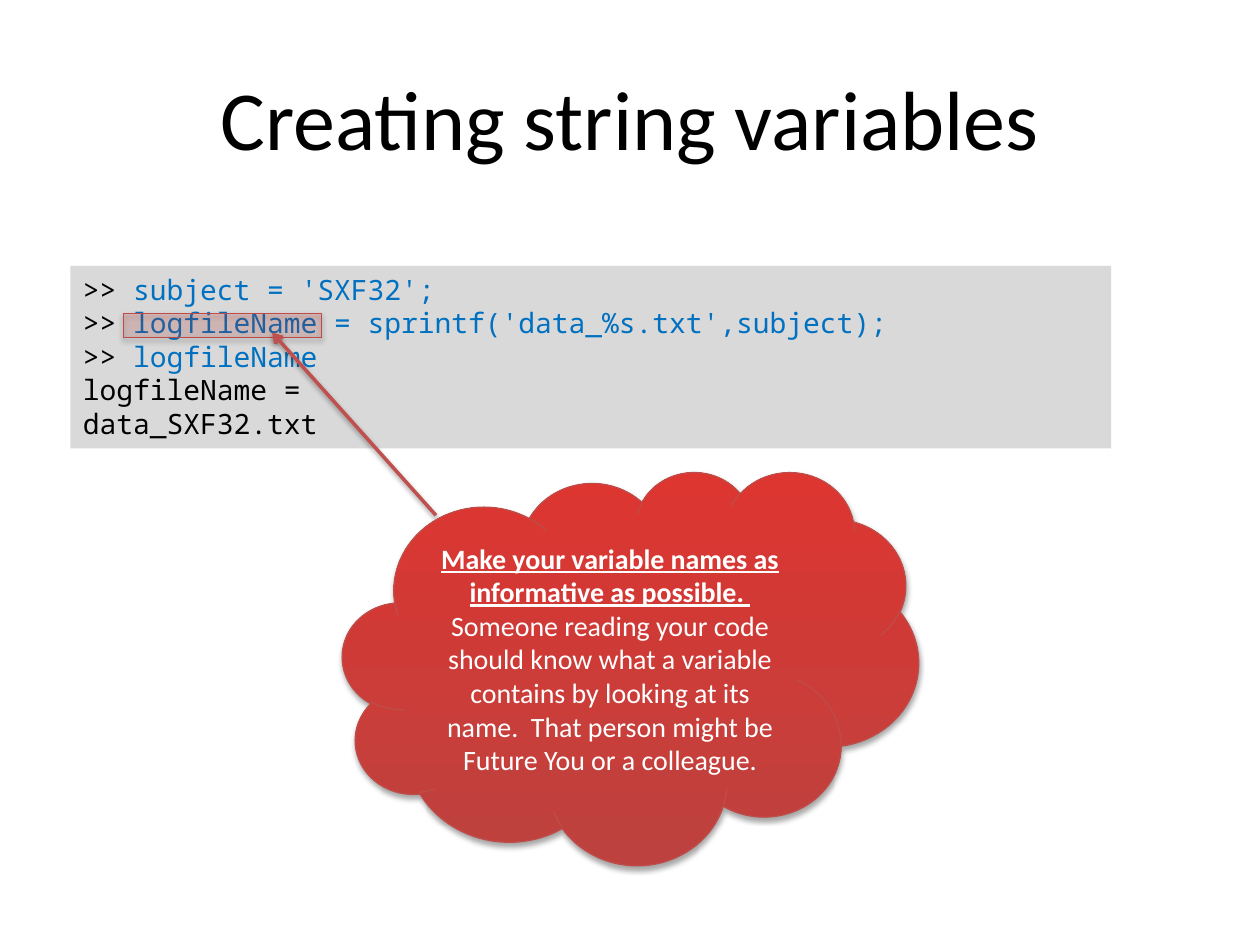
from dataclasses import dataclass
from typing import Optional

from lxml import etree
from pptx import Presentation, util as u
from pptx.dml.color import RGBColor
from pptx.enum import shapes, text
from pptx.oxml import parse_xml
from pptx.oxml.ns import nsdecls, qn

W, H = 10, 7.5
BLACK, BLUE, WHITE = "000000", "0070C0", "FFFFFF"
GREY, RED, DARK_RED, EDGE, ARROW = "D9D9D9", "DD3530", "BD423F", "BF4C48", "C0504D"
SANS, MONO = "Calibri", "Noto Sans Mono"


@dataclass
class Box:
    x: float
    y: float
    w: float
    h: float

    def emu(self) -> tuple:
        return (u.Inches(self.x * W), u.Inches(self.y * H),
                u.Inches(self.w * W), u.Inches(self.h * H))


@dataclass
class Span:
    text: str
    color: str
    font: str = MONO
    size: float = 16
    strong: bool = False


def rgb(value: str) -> RGBColor:
    return RGBColor.from_string(value)


def write(p, spans: list[Span], align=text.PP_ALIGN.LEFT) -> None:
    p.alignment = align
    for span in spans:
        r = p.add_run()
        r.text = span.text
        f = r.font
        f.name, f.size = span.font, u.Pt(span.size)
        f.bold = f.underline = span.strong
        f.color.rgb = rgb(span.color)


def add_shadow(sp, opacity: int, distance: float) -> None:
    sp_pr = sp._element.spPr
    for old in sp_pr.findall(qn("a:effectLst")):
        sp_pr.remove(old)
    sp_pr.append(parse_xml(
        f'<a:effectLst {nsdecls("a")}><a:outerShdw blurRad="{u.Pt(3.1)}" '
        f'dist="{u.Pt(distance)}" dir="5400000" rotWithShape="0">'
        f'<a:srgbClr val="{BLACK}"><a:alpha val="{opacity * 1000}"/></a:srgbClr>'
        f'</a:outerShdw></a:effectLst>'))


def add_red_shape(s, kind, box: Box, opacity: Optional[int] = None):
    sp = s.shapes.add_shape(kind, *box.emu())
    sp.fill.gradient()
    sp.fill.gradient_angle = 90
    for stop, color in zip(sp.fill.gradient_stops, (DARK_RED, RED)):
        stop.color.rgb = rgb(color)
    if opacity is not None:
        for color in sp._element.spPr.find(qn("a:gradFill")).iter(qn("a:srgbClr")):
            etree.SubElement(color, qn("a:alpha")).set("val", str(opacity * 1000))
    sp.line.color.rgb = rgb(EDGE)
    sp.line.width = u.Pt(0.75)
    add_shadow(sp, 35, 1.8)
    return sp


def add_title(s, box: Box, title: str) -> None:
    sp = s.shapes.title
    sp.left, sp.top, sp.width, sp.height = box.emu()
    tf = sp.text_frame
    tf.vertical_anchor = text.MSO_ANCHOR.MIDDLE
    write(tf.paragraphs[0], [Span(title, BLACK, SANS, 48)], text.PP_ALIGN.CENTER)


def add_code(s, box: Box, lines: list[str]) -> None:
    sp = s.shapes.add_shape(shapes.MSO_SHAPE.RECTANGLE, *box.emu())
    sp.shadow.inherit = False
    sp.fill.solid()
    sp.fill.fore_color.rgb = rgb(GREY)
    sp.line.fill.background()
    tf = sp.text_frame
    tf.word_wrap = True
    tf.vertical_anchor = text.MSO_ANCHOR.TOP
    tf.auto_size = text.MSO_AUTO_SIZE.SHAPE_TO_FIT_TEXT
    prompt = ">> "
    for i, line in enumerate(lines):
        p = tf.add_paragraph() if i else tf.paragraphs[0]
        if line.startswith(prompt):
            write(p, [Span(prompt, BLACK), Span(line[len(prompt):], BLUE)])
        else:
            write(p, [Span(line, BLACK)])


def add_arrow(s, start: tuple[float, float], end: tuple[float, float]) -> None:
    points = [u.Inches(share * side) for point in (start, end)
              for share, side in zip(point, (W, H))]
    cx = s.shapes.add_connector(shapes.MSO_CONNECTOR.STRAIGHT, *points)
    cx.line.color.rgb = rgb(ARROW)
    cx.line.width = u.Pt(2)
    etree.SubElement(cx.line._get_or_add_ln(), qn("a:tailEnd")).set("type", "arrow")
    add_shadow(cx, 38, 1.6)


def add_advice(s, box: Box, spans: list[Span]) -> None:
    sp = add_red_shape(s, shapes.MSO_SHAPE.CLOUD, box)
    tf = sp.text_frame
    tf.word_wrap = True
    tf.vertical_anchor = text.MSO_ANCHOR.MIDDLE
    write(tf.paragraphs[0], spans, text.PP_ALIGN.CENTER)


def main() -> None:
    prs = Presentation()
    prs.slide_width, prs.slide_height = u.Inches(W), u.Inches(H)
    s = prs.slides.add_slide(prs.slide_layouts[5])
    add_title(s, Box(0.05, 0.04, 0.9, 1 / 6), "Creating string variables")
    add_code(s, Box(0.056, 2.11 / H, 0.826, 1.45 / H), [
        ">> subject = 'SXF32';",
        ">> logfileName = sprintf('data_%s.txt',subject);",
        ">> logfileName",
        "logfileName =",
        "data_SXF32.txt",
    ])
    add_red_shape(s, shapes.MSO_SHAPE.RECTANGLE,
                  Box(0.098, 2.49 / H, 0.157, 0.19 / H), opacity=16)
    add_arrow(s, (0.346, 4.09 / H), (0.216, 2.64 / H))
    add_advice(s, Box(0.272, 3.74 / H, 0.457, 3.12 / H), [
        Span("Make your variable names as informative as possible.  ",
             WHITE, SANS, strong=True),
        Span("Someone reading your code should know what a variable contains "
             "by looking at its name.  That person might be Future You or a "
             "colleague.", WHITE, SANS),
    ])
    prs.save("out.pptx")


if __name__ == "__main__":
    main()
